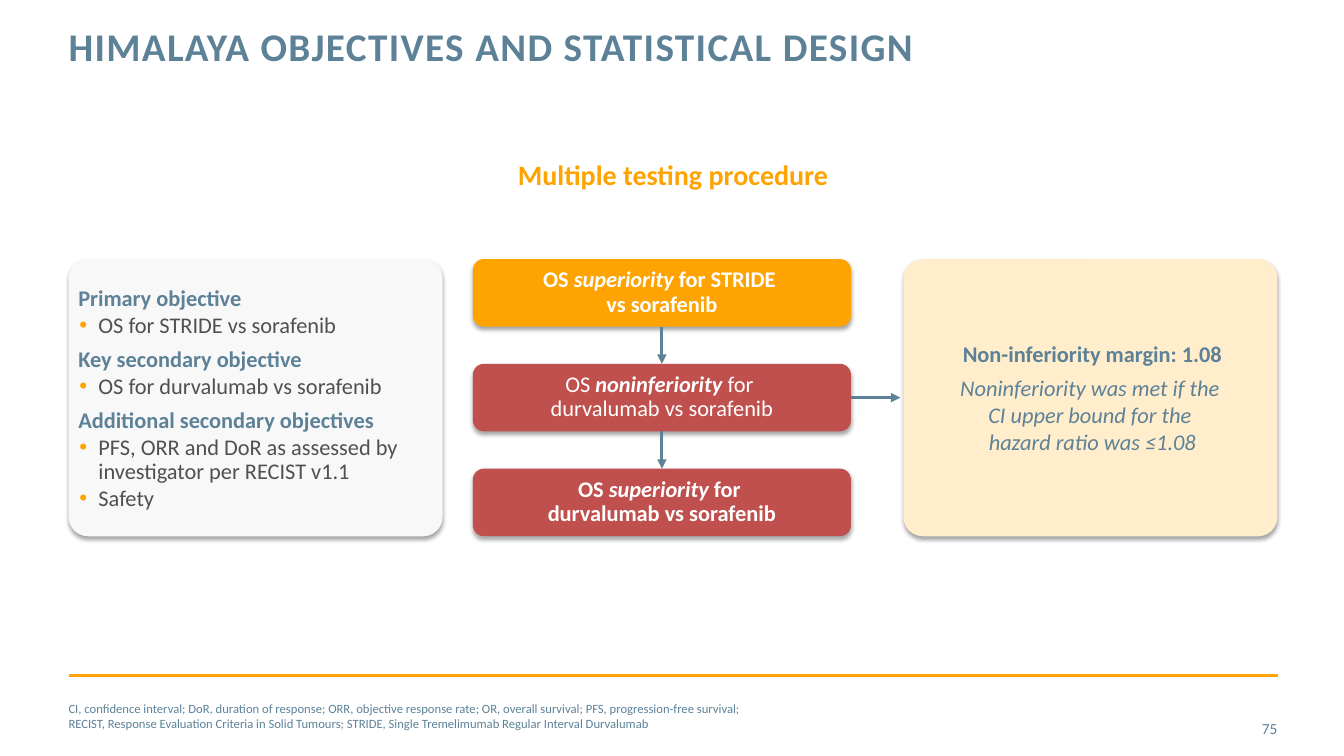
from dataclasses import dataclass

from lxml import etree
from pptx import Presentation
from pptx.dml.color import RGBColor
from pptx.enum.shapes import MSO_CONNECTOR, MSO_SHAPE
from pptx.enum.text import MSO_ANCHOR, PP_ALIGN
from pptx.oxml.ns import qn
from pptx.util import Inches, Pt

LEFT, CENTER, RIGHT = PP_ALIGN.LEFT, PP_ALIGN.CENTER, PP_ALIGN.RIGHT
TOP, MIDDLE = MSO_ANCHOR.TOP, MSO_ANCHOR.MIDDLE
ROUNDED = MSO_SHAPE.ROUNDED_RECTANGLE
STRAIGHT = MSO_CONNECTOR.STRAIGHT
BOTTOM_SITE, RIGHT_SITE, TOP_SITE = 2, 3, 0


@dataclass(frozen=True)
class Theme:
    font: str = "Calibri"
    slate: str = "5D8298"
    orange: str = "FEA302"
    rule: str = "FFA402"
    red: str = "C0504D"
    cream: str = "FFEDCC"
    pale: str = "F8F8F8"
    dark: str = "505050"
    white: str = "FFFFFF"
    title_size: int = 28
    heading_size: int = 20
    body_size: int = 16
    number_size: int = 11
    note_size: int = 9


THEME = Theme()

# Layout in inches
MARGIN = 0.68
ROW_TOP = 2.57
PANEL_WIDTH, PANEL_HEIGHT = 3.71, 2.75
PANEL_RIGHT_LEFT = 8.96
STEP_LEFT, STEP_WIDTH, STEP_HEIGHT, STEP_PITCH = 4.69, 3.75, 0.67, 1.04

OBJECTIVES = [
    ("Primary objective", ["OS for STRIDE vs sorafenib"]),
    ("Key secondary objective", ["OS for durvalumab vs sorafenib"]),
    ("Additional secondary objectives",
     ["PFS, ORR and DoR as assessed by investigator per RECIST v1.1", "Safety"]),
]

# Each step: fill, then runs of (text, bold, italic)
STEPS = [
    (THEME.orange, [("OS ", True, False), ("superiority", True, True),
                    (" for STRIDE \nvs sorafenib", True, False)]),
    (THEME.red, [("OS ", False, False), ("noninferiority ", True, True),
                 ("for \ndurvalumab vs sorafenib", False, False)]),
    (THEME.red, [("OS ", True, False), ("superiority", True, True),
                 (" for \ndurvalumab vs sorafenib", True, False)]),
]

NOTE = ("CI, confidence interval; DoR, duration of response; ORR, objective response rate; "
        "OR, overall survival; PFS, progression-free survival; \n"
        "RECIST, Response Evaluation Criteria in Solid Tumours; "
        "STRIDE, Single Tremelimumab Regular Interval Durvalumab")


def write_runs(paragraph, runs, size, color):
    """Add (text, bold, italic) runs; a newline becomes a line break."""
    for text, bold, italic in runs:
        for index, line in enumerate(text.split("\n")):
            if index:
                paragraph.add_line_break()
            run = paragraph.add_run()
            run.text = line
            font = run.font
            font.name, font.size = THEME.font, Pt(size)
            font.bold, font.italic = bold, italic
            font.color.rgb = RGBColor.from_string(color)


def set_frame(text_frame, anchor, left=0.0, top=0.0, right=0.0, bottom=0.0):
    text_frame.word_wrap = True
    text_frame.vertical_anchor = anchor
    text_frame.margin_left, text_frame.margin_right = Inches(left), Inches(right)
    text_frame.margin_top, text_frame.margin_bottom = Inches(top), Inches(bottom)


def add_label(slide, box, text, size, color, bold=False, align=LEFT, anchor=TOP):
    text_frame = slide.shapes.add_textbox(*map(Inches, box)).text_frame
    set_frame(text_frame, anchor)
    paragraph = text_frame.paragraphs[0]
    paragraph.alignment = align
    write_runs(paragraph, [(text, bold, False)], size, color)
    return paragraph


def add_card(slide, box, fill, corner):
    """Rounded rectangle with a soft shadow below it."""
    shape = slide.shapes.add_shape(ROUNDED, *map(Inches, box))
    shape.adjustments[0] = corner
    shape.fill.solid()
    shape.fill.fore_color.rgb = RGBColor.from_string(fill)
    shape.line.fill.background()
    shape.shadow.inherit = False
    effects = shape._element.spPr.find(qn("a:effectLst"))
    shadow = etree.SubElement(effects, qn("a:outerShdw"), blurRad=str(Pt(3.1)),
                              dist=str(Pt(1.8)), dir="5400000", rotWithShape="0")
    color = etree.SubElement(shadow, qn("a:srgbClr"), val="000000")
    etree.SubElement(color, qn("a:alpha"), val="35000")
    return shape


def add_panel(slide, left, fill):
    panel = add_card(slide, (left, ROW_TOP, PANEL_WIDTH, PANEL_HEIGHT), fill, 0.07)
    set_frame(panel.text_frame, MIDDLE, left=0.04)
    return panel.text_frame


def add_panel_paragraph(text_frame, text, color, align=LEFT, bold=False, italic=False, gap=0):
    paragraph = text_frame.paragraphs[0]
    if paragraph.runs:
        paragraph = text_frame.add_paragraph()
        paragraph.space_before = Pt(gap)
    paragraph.alignment = align
    paragraph.space_after = Pt(2)
    write_runs(paragraph, [(text, bold, italic)], THEME.body_size, color)
    return paragraph


def add_bullet(paragraph):
    paragraph.line_spacing = 0.9
    properties = paragraph._p.get_or_add_pPr()
    properties.set("marL", str(Inches(0.2)))
    properties.set("indent", str(Inches(-0.19)))
    color = etree.SubElement(properties, qn("a:buClr"))
    etree.SubElement(color, qn("a:srgbClr"), val=THEME.orange)
    etree.SubElement(properties, qn("a:buFont"), typeface="Arial")
    etree.SubElement(properties, qn("a:buChar"), char="•")


def add_step(slide, index, fill, runs):
    box = (STEP_LEFT, ROW_TOP + index * STEP_PITCH, STEP_WIDTH, STEP_HEIGHT)
    step = add_card(slide, box, fill, 0.163)
    set_frame(step.text_frame, MIDDLE, 0.1, 0.05, 0.1, 0.05)
    paragraph = step.text_frame.paragraphs[0]
    paragraph.alignment = CENTER
    paragraph.line_spacing = 0.9
    write_runs(paragraph, runs, THEME.body_size, THEME.white)
    return step


def add_line(slide, start, end, color, width, arrow=False):
    line = slide.shapes.add_connector(STRAIGHT, *map(Inches, start + end))
    line.line.color.rgb = RGBColor.from_string(color)
    line.line.width = Pt(width)
    if arrow:
        etree.SubElement(line.line._get_or_add_ln(), qn("a:tailEnd"), type="triangle")
    etree.SubElement(line._element.spPr, qn("a:effectLst"))
    return line


def main():
    presentation = Presentation()
    presentation.slide_width, presentation.slide_height = Inches(13.33), Inches(7.5)
    slide = presentation.slides.add_slide(presentation.slide_layouts[6])

    # Title and heading
    title = add_label(slide, (MARGIN, 0.27, 9.56, 0.88),
                      "HIMALAYA OBJECTIVES AND STATISTICAL DESIGN",
                      THEME.title_size, THEME.slate, bold=True)
    title.line_spacing = Pt(30)
    title.runs[0].font._element.set("spc", "100")
    add_label(slide, (MARGIN, 1.56, 11.99, 0.4), "Multiple testing procedure",
              THEME.heading_size, THEME.orange, bold=True, align=CENTER)

    # Objectives panel
    objectives = add_panel(slide, MARGIN, THEME.pale)
    for heading, items in OBJECTIVES:
        add_panel_paragraph(objectives, heading, THEME.slate, bold=True, gap=3)
        for item in items:
            add_bullet(add_panel_paragraph(objectives, item, THEME.dark))

    # Testing steps, joined top to bottom
    steps = [add_step(slide, index, *step) for index, step in enumerate(STEPS)]
    middle = STEP_LEFT + STEP_WIDTH / 2
    for index, (upper, lower) in enumerate(zip(steps, steps[1:])):
        step_top = ROW_TOP + index * STEP_PITCH
        arrow = add_line(slide, (middle, step_top + STEP_HEIGHT), (middle, step_top + STEP_PITCH),
                         THEME.slate, 2.25, arrow=True)
        arrow.begin_connect(upper, BOTTOM_SITE)
        arrow.end_connect(lower, TOP_SITE)

    # Margin panel and its arrow
    margin = add_panel(slide, PANEL_RIGHT_LEFT, THEME.cream)
    add_panel_paragraph(margin, "Non-inferiority margin: 1.08", THEME.slate, CENTER, bold=True)
    add_panel_paragraph(margin, "Noninferiority was met if the \nCI upper bound for the \n"
                        "hazard ratio was ≤1.08", THEME.slate, CENTER, italic=True, gap=3)
    center = ROW_TOP + STEP_PITCH + STEP_HEIGHT / 2
    arrow = add_line(slide, (STEP_LEFT + STEP_WIDTH, center), (PANEL_RIGHT_LEFT - 0.03, center),
                     THEME.slate, 2.25, arrow=True)
    arrow.begin_connect(steps[1], RIGHT_SITE)

    # Footer
    add_line(slide, (MARGIN, 6.7), (12.68, 6.7), THEME.rule, 2)
    add_label(slide, (MARGIN, 6.9, 11.0, 0.4), NOTE, THEME.note_size, THEME.slate, anchor=MIDDLE)
    add_label(slide, (11.81, 7.03, 0.86, 0.4), "75", THEME.number_size, THEME.slate,
              align=RIGHT, anchor=MIDDLE)

    presentation.save("out.pptx")


if __name__ == "__main__":
    main()
